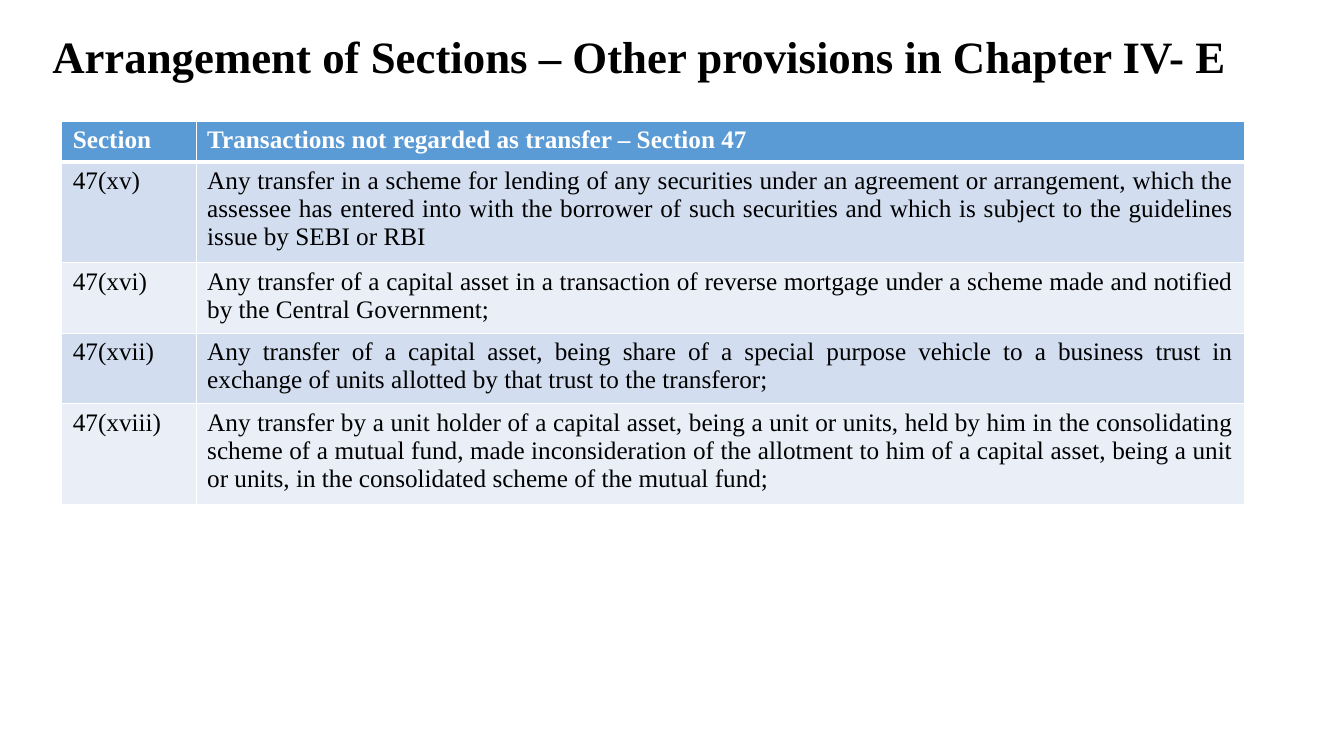
from dataclasses import dataclass

from lxml.etree import SubElement
from pptx import Presentation
from pptx.dml.color import RGBColor
from pptx.enum.text import MSO_ANCHOR, PP_ALIGN
from pptx.oxml.ns import qn
from pptx.util import Inches, Pt


@dataclass(frozen=True)
class Theme:
    font: str = "Times New Roman"
    title_size: int = 32
    body_size: int = 18
    ink: str = "000000"
    paper: str = "FFFFFF"
    header: str = "5B9BD5"
    bands: tuple = ("D2DEEF", "EAEFF7")
    rule: int = 1
    header_rule: int = 3


THEME = Theme()
WIDTH, HEIGHT = Inches(13.33), Inches(7.5)
TITLE = "Arrangement of Sections – Other provisions in Chapter IV- E"
ROWS = [
    ("Section", "Transactions not regarded as transfer – Section 47"),
    ("47(xv)", "Any transfer in a scheme for lending of any securities under an agreement or "
     "arrangement, which the assessee has entered into with the borrower of such securities "
     "and which is subject to the guidelines issue by SEBI or RBI"),
    ("47(xvi)", "Any transfer of a capital asset in a transaction of reverse mortgage under a "
     "scheme made and notified by the Central Government;"),
    ("47(xvii)", "Any transfer of a capital asset, being share of a special purpose vehicle to a "
     "business trust in exchange of units allotted by that trust to the transferor;"),
    ("47(xviii)", "Any transfer by a unit holder of a capital asset, being a unit or units, held "
     "by him in the consolidating scheme of a mutual fund, made inconsideration of the "
     "allotment to him of a capital asset, being a unit or units, in the consolidated scheme "
     "of the mutual fund;"),
]


def share_x(percent):
    return round(WIDTH * percent / 100)


def share_y(percent):
    return round(HEIGHT * percent / 100)


def write(tf, text, size=THEME.body_size, color=THEME.ink, bold=False,
          align=PP_ALIGN.LEFT, spacing=None):
    p = tf.paragraphs[0]
    p.alignment = align
    p.line_spacing = spacing
    r = p.add_run()
    r.text = text
    r.font.name = THEME.font
    r.font.size = Pt(size)
    r.font.bold = bold
    r.font.color.rgb = RGBColor.from_string(color)


def add_title(s, text):
    tf = s.shapes.add_textbox(share_x(3.15), share_y(1.47), share_x(89.4), share_y(12.67)).text_frame
    tf.word_wrap = True
    tf.vertical_anchor = MSO_ANCHOR.MIDDLE
    write(tf, text, size=THEME.title_size, bold=True, spacing=0.9)


def add_borders(cell, **widths):
    tc_pr = cell._tc.get_or_add_tcPr()
    for side, width in widths.items():
        ln = SubElement(tc_pr, qn(f"a:ln{side}"), w=str(Pt(width)))
        fill = SubElement(ln, qn("a:solidFill"))
        SubElement(fill, qn("a:srgbClr"), val=THEME.paper)


def style_cell(cell, text, row, col):
    is_header = row == 0
    add_borders(cell, L=THEME.rule, R=THEME.rule,
                T=THEME.header_rule if row == 1 else THEME.rule,
                B=THEME.header_rule if is_header else THEME.rule)
    cell.fill.solid()
    fill = THEME.header if is_header else THEME.bands[(row - 1) % len(THEME.bands)]
    cell.fill.fore_color.rgb = RGBColor.from_string(fill)
    cell.margin_left = cell.margin_right = Inches(0.11)
    write(cell.text_frame, text, bold=is_header,
          color=THEME.paper if is_header else THEME.ink,
          align=PP_ALIGN.JUSTIFY if col and not is_header else PP_ALIGN.LEFT)


def add_sections(s, rows):
    columns = [share_x(10), share_x(78)]
    row_height = share_y(5.4)
    table = s.shapes.add_table(len(rows), len(columns), share_x(4.6), share_y(16),
                               sum(columns), row_height * len(rows)).table
    for column, width in zip(table.columns, columns):
        column.width = width
    for i, texts in enumerate(rows):
        for j, text in enumerate(texts):
            style_cell(table.cell(i, j), text, i, j)


def main():
    prs = Presentation()
    prs.slide_width, prs.slide_height = WIDTH, HEIGHT
    s = prs.slides.add_slide(prs.slide_layouts[6])
    add_title(s, TITLE)
    add_sections(s, ROWS)
    prs.save("out.pptx")


if __name__ == "__main__":
    main()
